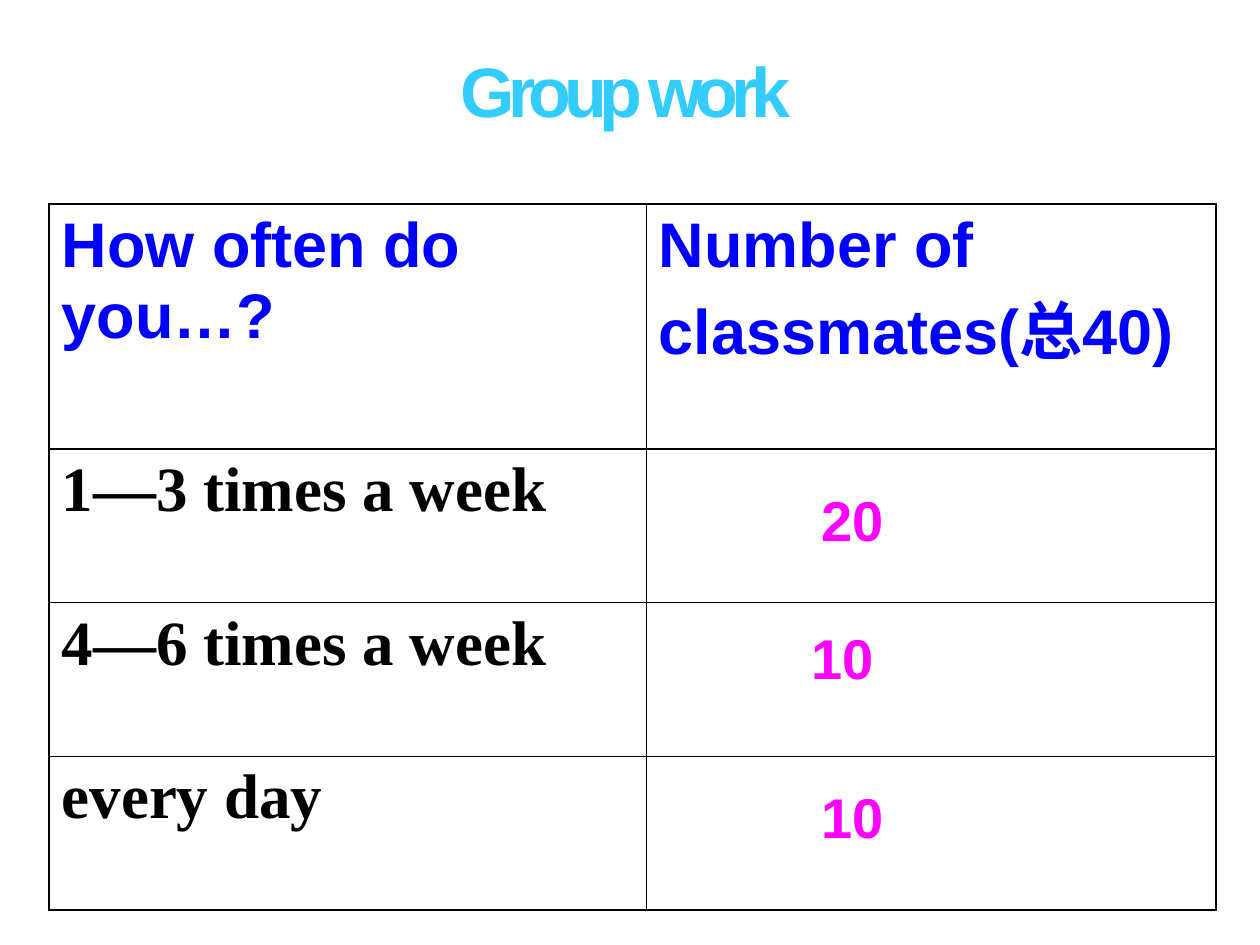
from pptx import Presentation as Deck
from pptx.util import Inches as In, Pt
from pptx.dml.color import RGBColor as RGB
from pptx.enum.text import PP_ALIGN as Align, MSO_AUTO_SIZE as Fit
from pptx.oxml import parse_xml as parse
from pptx.oxml.ns import nsdecls

theme = {
    "title": {"name": "Arial", "size": Pt(40), "bold": True, "color": "33CCFF"},
    "head": {"name": "Arial", "size": Pt(36), "bold": True, "color": "0000FF"},
    "label": {"name": "Times New Roman", "size": Pt(36), "bold": True, "color": "000000"},
    "count": {"name": "Arial", "size": Pt(32), "bold": True, "color": "FF00FF"},
    "paper": "FFFFFF",
    "rule": "000000",
    "edge": "000099",
}


def write(frame, text, style):
    frame.text = text
    for par in frame.paragraphs:
        for run in par.runs:
            for key, val in theme[style].items():
                if key == "color":
                    run.font.color.rgb = RGB.from_string(val)
                else:
                    setattr(run.font, key, val)


def line(tag, color):
    return parse(
        f'<a:{tag} {nsdecls("a")} w="12700"><a:solidFill>'
        f'<a:srgbClr val="{color}"/></a:solidFill></a:{tag}>'
    )


deck = Deck()
deck.slide_width, deck.slide_height = In(10), In(7.5)
slide = deck.slides.add_slide(deck.slide_layouts[6])

cols = [4.74, 4.52]
rows = [1.9] + [1.22] * 3
grid = [
    ("How often do\nyou…?", "Number of classmates(总40)"),
    ("1—3 times a week", ""),
    ("4—6 times a week", ""),
    ("every day", ""),
]
table = slide.shapes.add_table(
    len(rows), len(cols), In(0.39), In(1.62), In(sum(cols)), In(sum(rows))
).table
for col, wide in zip(table.columns, cols):
    col.width = In(wide)
for row, tall, texts, style in zip(table.rows, rows, grid, ["head"] + ["label"] * 3):
    row.height = In(tall)
    for cell, text in zip(row.cells, texts):
        write(cell.text_frame, text, style)
        props = cell._tc.get_or_add_tcPr()
        for tag in ("lnL", "lnR", "lnT", "lnB"):
            props.append(line(tag, theme["rule"]))
        cell.fill.solid()
        cell.fill.fore_color.rgb = RGB.from_string(theme["paper"])

boxes = [
    ("20", "count", 6.42, 3.75, 1.46, 0.63),
    ("10", "count", 6.34, 4.85, 1.26, 0.63),
    ("10", "count", 6.42, 6.11, 0.94, 0.63),
    ("Group work", "title", 2.8, 0.28, 4.33, 1.1),
]
for text, style, *place in boxes:
    frame = slide.shapes.add_textbox(*map(In, place)).text_frame
    look = {"word_wrap": True, "margin_top": In(0.1), "margin_bottom": 0,
            "auto_size": Fit.SHAPE_TO_FIT_TEXT}
    if style == "title":
        look.update(word_wrap=False, auto_size=Fit.NONE)
    for key, val in look.items():
        setattr(frame, key, val)
    write(frame, text, style)
    if style == "title":
        par = frame.paragraphs[0]
        par.alignment = Align.CENTER
        props = par.runs[0].font._element
        props.set("spc", "-400")
        props.insert(0, line("ln", theme["edge"]))

deck.save("out.pptx")
